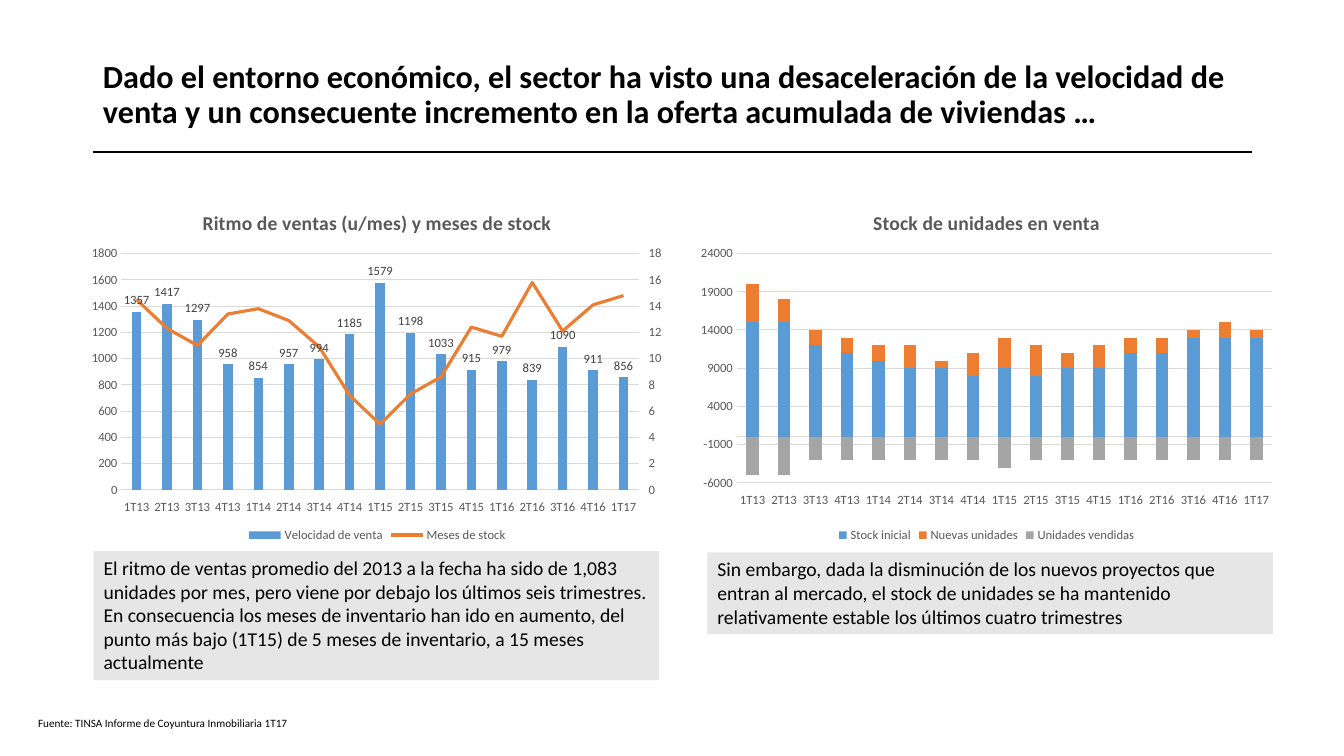
from dataclasses import dataclass

from pptx import Presentation
from pptx.chart.axis import ValueAxis
from pptx.chart.data import CategoryChartData
from pptx.dml.color import RGBColor
from pptx.enum.chart import XL_CHART_TYPE as ChartType
from pptx.enum.chart import XL_LABEL_POSITION as LabelPosition
from pptx.enum.chart import XL_LEGEND_POSITION as LegendPosition
from pptx.enum.chart import XL_MARKER_STYLE as MarkerStyle
from pptx.enum.chart import XL_TICK_LABEL_POSITION as TickLabel
from pptx.enum.chart import XL_TICK_MARK as TickMark
from pptx.enum.shapes import MSO_CONNECTOR as Connector
from pptx.enum.shapes import MSO_SHAPE as Shape
from pptx.enum.text import MSO_ANCHOR as Anchor
from pptx.enum.text import MSO_AUTO_SIZE as AutoSize
from pptx.enum.text import PP_ALIGN as Align
from pptx.oxml import parse_xml
from pptx.oxml.ns import nsdecls, qn
from pptx.util import Cm, Pt


@dataclass(frozen=True)
class Theme:
    font: str = "Calibri"
    text: str = "000000"
    muted: str = "595959"
    label: str = "404040"
    grid: str = "D9D9D9"
    panel: str = "E7E6E6"
    series: tuple = ("5B9BD5", "ED7D31", "A5A5A5")
    title_size: float = 23
    body_size: float = 14
    axis_size: float = 9
    source_size: float = 8


QUARTERS = [f"{quarter}T{year}" for year in range(13, 17) for quarter in range(1, 5)] + ["1T17"]
SALES = {
    "Velocidad de venta": [1357, 1417, 1297, 958, 854, 957, 994, 1185, 1579, 1198, 1033,
                           915, 979, 839, 1090, 911, 856],
    "Meses de stock": [14.5, 12.3, 11, 13.4, 13.8, 12.9, 10.9, 7.2, 5, 7.3, 8.6, 12.4,
                       11.7, 15.8, 12.1, 14.1, 14.8],
}
STOCK_THOUSANDS = {
    "Stock inicial": [15, 15, 12, 11, 10, 9, 9, 8, 9, 8, 9, 9, 11, 11, 13, 13, 13],
    "Nuevas unidades": [5, 3, 2, 2, 2, 3, 1, 3, 4, 4, 2, 3, 2, 2, 1, 2, 1],
    "Unidades vendidas": [-5, -5] + [-3] * 6 + [-4] + [-3] * 8,
}


class SlideBuilder:
    def __init__(self, presentation, theme):
        self.theme = theme
        self.slide = presentation.slides.add_slide(presentation.slide_layouts[5])

    def style_font(self, font, size, color, bold=False):
        font.name = self.theme.font
        font.size = Pt(size)
        font.bold = bold
        font.color.rgb = RGBColor.from_string(color)

    def add_text(self, frame, text, size, bold=False):
        frame.word_wrap = True
        frame.auto_size = AutoSize.NONE
        paragraph = frame.paragraphs[0]
        paragraph.alignment = Align.LEFT
        run = paragraph.add_run()
        run.text = text
        self.style_font(run.font, size, self.theme.text, bold)
        return paragraph

    def title(self, text, left, top, width, height):
        shape = self.slide.shapes.title
        shape.left, shape.top, shape.width, shape.height = map(Cm, (left, top, width, height))
        shape.text_frame.vertical_anchor = Anchor.MIDDLE
        self.add_text(shape.text_frame, text, self.theme.title_size, True).line_spacing = 0.9

    def rule(self, left, right, top):
        line = self.slide.shapes.add_connector(
            Connector.STRAIGHT, Cm(left), Cm(top), Cm(right), Cm(top))
        line.line.color.rgb = RGBColor.from_string(self.theme.text)
        line.line.width = Pt(1.5)
        line._element.spPr.append(parse_xml(f"<a:effectLst {nsdecls('a')}/>"))

    def panel(self, text, left, top, width, height):
        shape = self.slide.shapes.add_shape(
            Shape.RECTANGLE, Cm(left), Cm(top), Cm(width), Cm(height))
        shape.shadow.inherit = False
        shape.fill.solid()
        shape.fill.fore_color.rgb = RGBColor.from_string(self.theme.panel)
        shape.line.fill.background()
        shape.text_frame.vertical_anchor = Anchor.TOP
        self.add_text(shape.text_frame, text, self.theme.body_size)

    def source(self, text, left, top, width, height):
        box = self.slide.shapes.add_textbox(Cm(left), Cm(top), Cm(width), Cm(height))
        self.add_text(box.text_frame, text, self.theme.source_size)

    def chart(self, kind, title, series, left, gap, overlap, plot_box):
        """Add a column chart; plot_box is x, y, width, height as shares of the chart."""
        theme = self.theme
        data = CategoryChartData()
        data.categories = QUARTERS
        for name, values in series.items():
            data.add_series(name, values)
        chart = self.slide.shapes.add_chart(
            kind, Cm(left), Cm(4.88), Cm(14.99), Cm(8.89), data).chart
        self.style_font(chart.font, 10, theme.text)
        chart.has_title = True
        run = chart.chart_title.text_frame.paragraphs[0].add_run()
        run.text = title
        self.style_font(run.font, theme.body_size, theme.muted, True)
        chart.has_legend = True
        chart.legend.position = LegendPosition.BOTTOM
        chart.legend.include_in_layout = False
        self.style_font(chart.legend.font, theme.axis_size, theme.muted)

        plot = chart.plots[0]
        plot.vary_by_categories = False
        plot.gap_width, plot.overlap = gap, overlap
        for column, color in zip(plot.series, theme.series):
            column.invert_if_negative = False
            column.format.fill.solid()
            column.format.fill.fore_color.rgb = RGBColor.from_string(color)

        axis = chart.category_axis
        axis.major_tick_mark = axis.minor_tick_mark = TickMark.NONE
        axis.tick_label_position = TickLabel.LOW
        axis.format.line.color.rgb = RGBColor.from_string(theme.grid)
        axis.format.line.width = Pt(0.75)
        self.style_font(axis.tick_labels.font, theme.axis_size, theme.muted)
        self.place_plot(chart, plot_box)
        return chart

    def place_plot(self, chart, plot_box):
        area = chart._chartSpace.find(f".//{qn('c:plotArea')}")
        for layout in area.findall(qn("c:layout")):
            area.remove(layout)
        sizes = "".join(f'<c:{key} val="{share}"/>' for key, share in zip("xywh", plot_box))
        area.insert(0, parse_xml(
            f'<c:layout {nsdecls("c")}><c:manualLayout><c:layoutTarget val="inner"/>'
            f'<c:xMode val="edge"/><c:yMode val="edge"/>{sizes}</c:manualLayout></c:layout>'))

    def value_axis(self, axis, low, high, step, gridlines=True, tick=TickMark.NONE):
        axis.minimum_scale, axis.maximum_scale, axis.major_unit = low, high, step
        axis.major_tick_mark, axis.minor_tick_mark = tick, TickMark.NONE
        axis.format.line.fill.background()
        axis.has_major_gridlines = gridlines
        if gridlines:
            line = axis.major_gridlines.format.line
            line.color.rgb = RGBColor.from_string(self.theme.grid)
            line.width = Pt(0.75)
        self.style_font(axis.tick_labels.font, self.theme.axis_size, self.theme.muted)

    def value_labels(self, series):
        labels = series.data_labels
        labels.show_value = True
        labels.position = LabelPosition.OUTSIDE_END
        self.style_font(labels.font, self.theme.axis_size, self.theme.label)

    def last_series_to_line(self, chart):
        """Turn the last column series into a line and return its right-hand axis."""
        area = chart._chartSpace.find(f".//{qn('c:plotArea')}")
        bars = area.find(qn("c:barChart"))
        series = bars.findall(qn("c:ser"))[-1]
        for tag in ("c:invertIfNegative", "c:spPr"):
            series.remove(series.find(qn(tag)))
        lines = parse_xml(
            f'<c:lineChart {nsdecls("c")}><c:grouping val="standard"/><c:varyColors val="0"/>'
            '<c:marker val="1"/><c:axId val="5001"/><c:axId val="5002"/></c:lineChart>')
        lines.insert(2, series)
        bars.addnext(lines)
        shared = '<c:scaling><c:orientation val="minMax"/></c:scaling><c:delete val="{}"/>'
        category = parse_xml(
            f'<c:catAx {nsdecls("c")}><c:axId val="5001"/>{shared.format(1)}'
            '<c:axPos val="b"/><c:crossAx val="5002"/><c:crosses val="autoZero"/></c:catAx>')
        value = parse_xml(
            f'<c:valAx {nsdecls("c")}><c:axId val="5002"/>{shared.format(0)}'
            '<c:axPos val="r"/><c:numFmt formatCode="General" sourceLinked="0"/>'
            '<c:tickLblPos val="nextTo"/><c:crossAx val="5001"/><c:crosses val="max"/></c:valAx>')
        area.find(qn("c:valAx")).addnext(value)
        value.addnext(category)
        line = chart.plots[1].series[0]
        line.smooth = False
        line.marker.style = MarkerStyle.NONE
        line.format.line.color.rgb = RGBColor.from_string(self.theme.series[1])
        line.format.line.width = Pt(2.25)
        return ValueAxis(value)


def main():
    presentation = Presentation()
    presentation.slide_width, presentation.slide_height = Cm(33.87), Cm(19.05)
    builder = SlideBuilder(presentation, Theme())
    builder.rule(2.34, 31.55, 3.84)
    builder.title("Dado el entorno económico, el sector ha visto una desaceleración de la velocidad de venta y un consecuente incremento en la oferta acumulada de viviendas …", 2.34, 1.02, 29.21, 2.79)

    sales = builder.chart(ChartType.COLUMN_CLUSTERED, "Ritmo de ventas (u/mes) y meses de stock",
                          SALES, 2.01, 219, -27, (0.07, 0.17, 0.87, 0.67))
    builder.value_axis(sales.value_axis, 0, 1800, 200)
    builder.value_labels(sales.plots[0].series[0])
    months_axis = builder.last_series_to_line(sales)
    builder.value_axis(months_axis, 0, 18, 2, gridlines=False, tick=TickMark.OUTSIDE)
    builder.panel("El ritmo de ventas promedio del 2013 a la fecha ha sido de 1,083 unidades por mes, pero viene por debajo los últimos seis trimestres. En consecuencia los meses de inventario han ido en aumento, del punto más bajo (1T15) de 5 meses de inventario, a 15 meses actualmente", 2.36, 13.89, 14.25, 3.25)

    units = {name: [1000 * value for value in values] for name, values in STOCK_THOUSANDS.items()}
    stock = builder.chart(ChartType.COLUMN_STACKED, "Stock de unidades en venta",
                          units, 17.37, 150, 100, (0.08, 0.17, 0.9, 0.65))
    builder.value_axis(stock.value_axis, -6000, 24000, 5000)
    builder.panel("Sin embargo, dada la disminución de los nuevos proyectos que entran al mercado, el stock de unidades se ha mantenido relativamente estable los últimos cuatro trimestres", 17.83, 13.92, 14.25, 2.06)
    builder.source("Fuente: TINSA Informe de Coyuntura Inmobiliaria 1T17", 0.71, 17.93, 10.74, 0.61)
    presentation.save("out.pptx")


if __name__ == "__main__":
    main()
